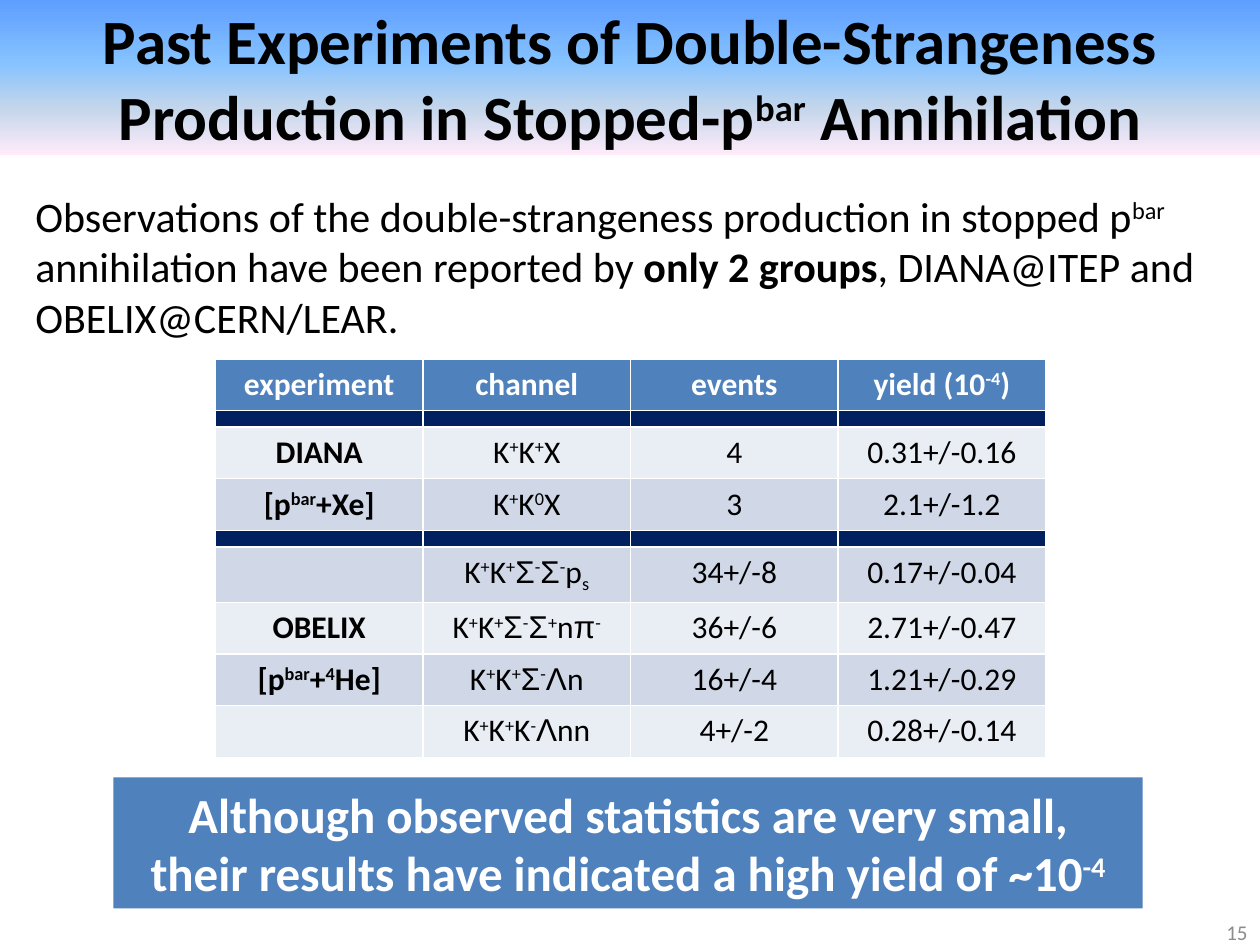
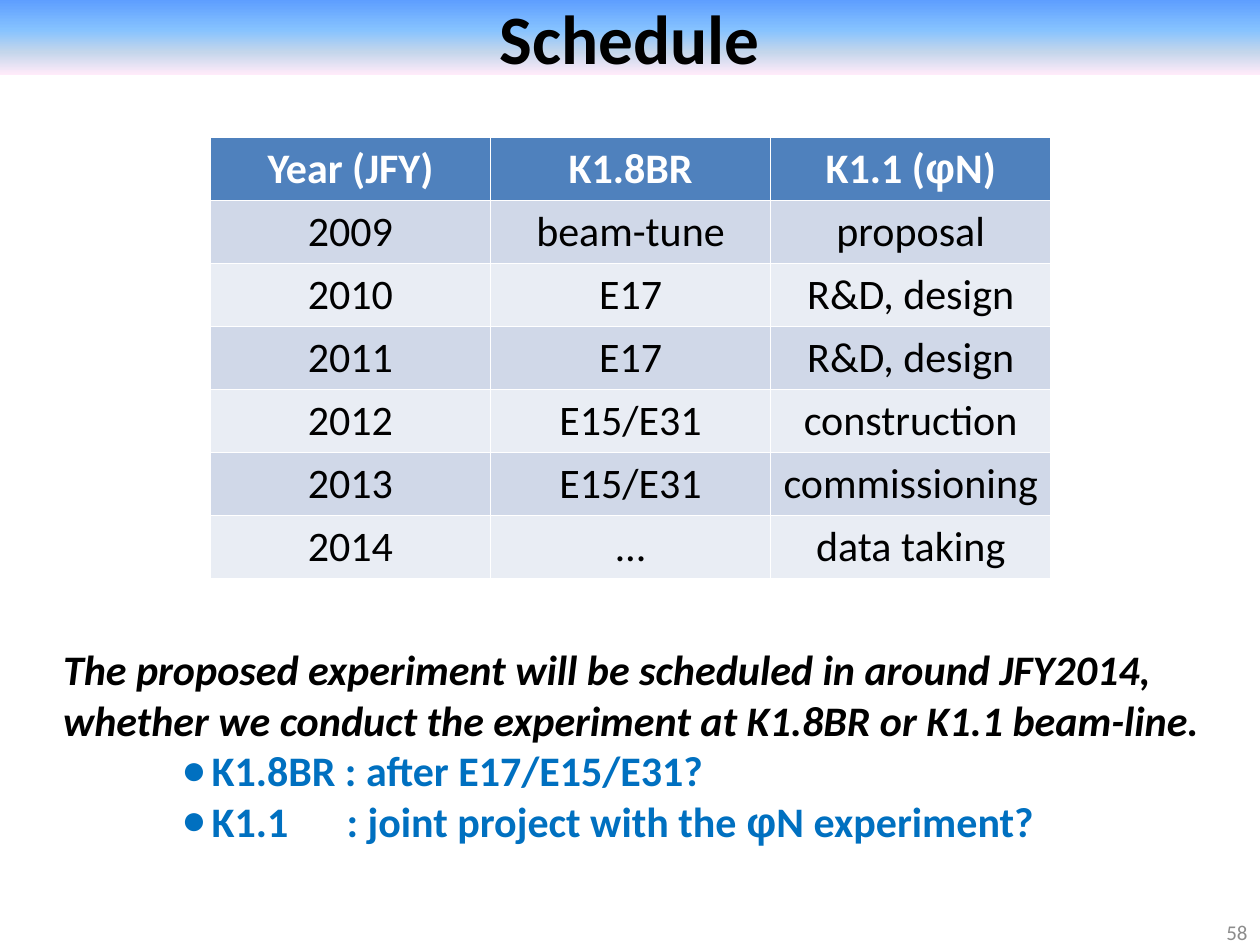
"""Build two slides on double-strangeness experiments: past results and schedule."""
from dataclasses import dataclass
from itertools import groupby

from lxml.etree import SubElement
from pptx import Presentation
from pptx.dml.color import RGBColor
from pptx.enum.shapes import MSO_SHAPE as Shape
from pptx.enum.text import MSO_ANCHOR as Anchor, MSO_AUTO_SIZE as AutoSize, PP_ALIGN as Align
from pptx.oxml import parse_xml
from pptx.oxml.ns import nsdecls, qn
from pptx.util import Inches, Pt


@dataclass(frozen=True)
class Theme:
    font: str = "Calibri"
    greek_font: str = "Arial"
    black: str = "000000"
    white: str = "FFFFFF"
    accent: str = "4F81BD"
    separator: str = "002060"
    bands: tuple = ("E9EDF4", "D0D8E8")
    emphasis: str = "0070C0"
    page: str = "8C8C8C"
    title_stops: tuple = ((0, "5E9EFF"), (40, "85C2FF"), (70, "C4D6EB"), (100, "FFEBFA"))
    body_size: float = 24
    callout_size: float = 28
    page_size: float = 12
    separator_size: float = 6


THEME = Theme()
SHIFTS = {"^": "30000", "_": "-25000"}

# Text is split at "|"; a part led by ^ is raised, _ lowered, * bold.
EXPERIMENTS = {
    "page": "15",
    "title": "Past Experiments of Double-Strangeness Production in Stopped-p|^bar| Annihilation",
    "title_size": 36,
    "title_height": 1.23,
    "observations": "Observations of the double-strangeness production in stopped p|^bar| annihilation "
                    "have been reported by |*only 2 groups|, DIANA@ITEP and OBELIX@CERN/LEAR.",
    "results": [
        ("experiment", "channel", "events", "yield (10|^-4|)"),
        None,
        ("DIANA", "K|^+|K|^+|X", "4", "0.31+/-0.16"),
        ("[p|^bar|+Xe]", "K|^+|K|^0|X", "3", "2.1+/-1.2"),
        None,
        ("", "K|^+|K|^+|Σ|^-|Σ|^-|p|_s", "34+/-8", "0.17+/-0.04"),
        ("OBELIX", "K|^+|K|^+|Σ|^-|Σ|^+|nπ|^-", "36+/-6", "2.71+/-0.47"),
        ("[p|^bar|+|^4|He]", "K|^+|K|^+|Σ|^-|Λn", "16+/-4", "1.21+/-0.29"),
        ("", "K|^+|K|^+|K|^-|Λnn", "4+/-2", "0.28+/-0.14"),
    ],
    "conclusion": ["Although observed statistics are very small,",
                   "their results have indicated a high yield of ~10|^-4"],
}
SCHEDULE = {
    "page": "58",
    "title": "Schedule",
    "title_size": 39.6,
    "title_height": 0.59,
    "years": [
        ("Year (JFY)", "K1.8BR", "K1.1 (φN)"),
        ("2009", "beam-tune", "proposal"),
        ("2010", "E17", "R&D, design"),
        ("2011", "E17", "R&D, design"),
        ("2012", "E15/E31", "construction"),
        ("2013", "E15/E31", "commissioning"),
        ("2014", "…", "data taking"),
    ],
    "proposal": ["The proposed experiment will be scheduled in around JFY2014,",
                 "whether we conduct the experiment at K1.8BR or K1.1 beam-line."],
    "options": ["K1.8BR : after E17/E15/E31?",
                "K1.1\t: joint project with the φN experiment?"],
}


def is_greek(letter):
    return "Α" <= letter <= "ω"


def write(paragraph, text, size, color=THEME.black, bold=False, italic=False, align=None):
    paragraph.alignment = align
    paragraph.space_before = Pt(0)
    for part in filter(None, text.split("|")):
        mark = part[0] if part[0] in "^_*" else ""
        for greek, letters in groupby(part[len(mark):], is_greek):
            run = paragraph.add_run()
            run.text = "".join(letters)
            font = run.font
            font.name = THEME.greek_font if greek else THEME.font
            font.size, font.bold, font.italic = Pt(size), bold or mark == "*", italic
            font.color.rgb = RGBColor.from_string(color)
            if mark in SHIFTS:
                run._r.get_or_add_rPr().set("baseline", SHIFTS[mark])


def write_lines(frame, lines, *style, **options):
    for number, line in enumerate(lines):
        paragraph = frame.paragraphs[0] if number == 0 else frame.add_paragraph()
        write(paragraph, line, *style, **options)


def place(shape, left, top, width, height):
    shape.left, shape.top, shape.width, shape.height = map(Inches, (left, top, width, height))


def paint(target, color):
    target.fill.solid()
    target.fill.fore_color.rgb = RGBColor.from_string(color)


def set_indent(paragraph, left=0, hanging=0, bullet=None):
    properties = paragraph._p.get_or_add_pPr()
    properties.set("marL", str(Inches(left)))
    properties.set("indent", str(-Inches(hanging)))
    if bullet:
        SubElement(properties, qn("a:buChar"), char=bullet)
    else:
        SubElement(properties, qn("a:buNone"))
    return properties


def start_slide(deck, content):
    slide = deck.slides.add_slide(deck.slide_layouts[1])
    title = slide.shapes.title
    place(title, 0, 0, 10, content["title_height"])
    stops = "".join(f'<a:gs pos="{at * 1000}"><a:srgbClr val="{color}"/></a:gs>'
                    for at, color in THEME.title_stops)
    title._element.spPr.append(parse_xml(
        f'<a:gradFill {nsdecls("a")} rotWithShape="1"><a:gsLst>{stops}</a:gsLst>'
        '<a:lin ang="5400000" scaled="0"/></a:gradFill>'))
    title.text_frame.auto_size = AutoSize.NONE
    title.text_frame.vertical_anchor = Anchor.MIDDLE
    write(title.text_frame.paragraphs[0], content["title"], content["title_size"],
          bold=True, align=Align.CENTER)

    page = slide.shapes.add_textbox(*map(Inches, (7.67, 7.2, 2.33, 0.4))).text_frame
    page.word_wrap = True
    page.vertical_anchor = Anchor.MIDDLE
    write(page.paragraphs[0], content["page"], THEME.page_size, THEME.page, align=Align.RIGHT)
    return slide


def place_body(slide, *box):
    body = slide.placeholders[1]
    place(body, *box)
    body.text_frame.auto_size = AutoSize.NONE
    return body.text_frame


def add_grid(slide, rows, box, size, row_height, separator_height=0.13, bold_labels=False):
    left, top, width = box
    columns = len(rows[0])
    heights = [row_height if row else separator_height for row in rows]
    grid = slide.shapes.add_table(len(rows), columns, *map(Inches, (left, top, width, sum(heights)))).table
    for number, (row, height) in enumerate(zip(rows, heights)):
        grid.rows[number].height = Inches(height)
        for column in range(columns):
            cell = grid.cell(number, column)
            paragraph = cell.text_frame.paragraphs[0]
            if row is None:
                paint(cell, THEME.separator)
                cell.margin_top = cell.margin_bottom = 0
                SubElement(paragraph._p, qn("a:endParaRPr"), sz=str(THEME.separator_size * 100))
                continue
            header = number == 0
            paint(cell, THEME.accent if header else THEME.bands[number % 2])
            write(paragraph, row[column], size, THEME.white if header else THEME.black,
                  bold=header or (bold_labels and column == 0), align=Align.CENTER)


def build_experiments(deck):
    slide = start_slide(deck, EXPERIMENTS)
    observations = place_body(slide, 0.18, 1.46, 9.63, 1.31).paragraphs[0]
    write(observations, EXPERIMENTS["observations"], THEME.body_size)
    set_indent(observations)
    add_grid(slide, EXPERIMENTS["results"], (1.71, 2.85, 6.59), 18, 0.41, bold_labels=True)

    conclusion = slide.shapes.add_shape(Shape.RECTANGLE, *map(Inches, (0.9, 6.17, 8.17, 1.04)))
    conclusion.shadow.inherit = False
    paint(conclusion, THEME.accent)
    conclusion.line.fill.background()
    conclusion.text_frame.vertical_anchor = Anchor.MIDDLE
    write_lines(conclusion.text_frame, EXPERIMENTS["conclusion"], THEME.callout_size, THEME.white,
                bold=True, align=Align.CENTER)


def build_schedule(deck):
    slide = start_slide(deck, SCHEDULE)
    add_grid(slide, SCHEDULE["years"], (1.67, 1.09, 6.67), 24, 0.5)
    plan = place_body(slide, 0.4, 5.06, 9.22, 1.72)
    write_lines(plan, SCHEDULE["proposal"], THEME.body_size, bold=True, italic=True)
    for paragraph in plan.paragraphs:
        set_indent(paragraph)
    for option in SCHEDULE["options"]:
        paragraph = plan.add_paragraph()
        write(paragraph, option, THEME.body_size, THEME.emphasis, bold=True)
        tabs = SubElement(set_indent(paragraph, 1.18, 0.24, "●"), qn("a:tabLst"))
        for stop in (1.07, 2.25):
            SubElement(tabs, qn("a:tab"), pos=str(Inches(stop)), algn="l")


def main():
    deck = Presentation()
    deck.slide_width, deck.slide_height = Inches(10), Inches(7.5)
    build_experiments(deck)
    build_schedule(deck)
    deck.save("out.pptx")


if __name__ == "__main__":
    main()
